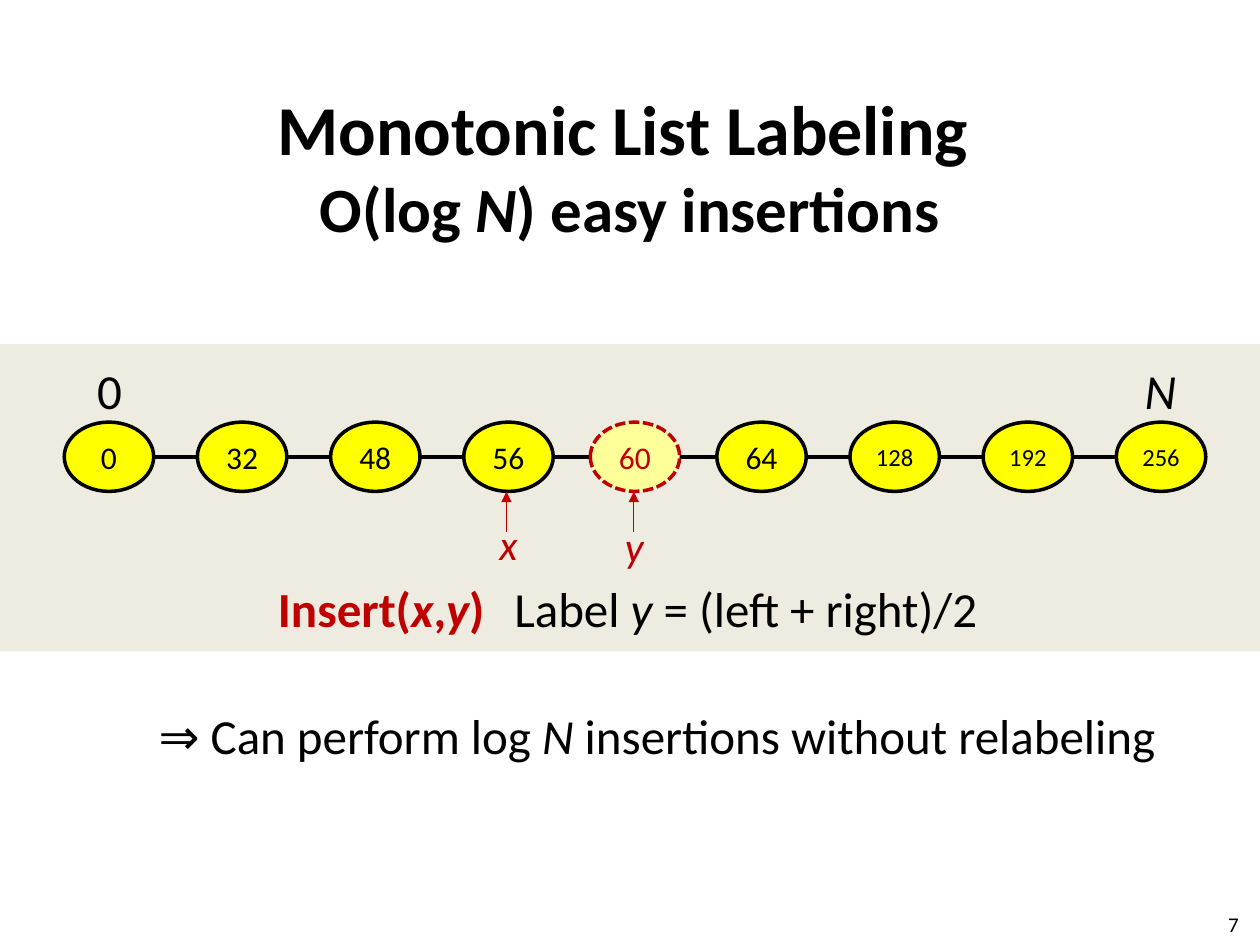
from lxml import etree
from pptx import Presentation
from pptx.dml.color import RGBColor
from pptx.enum.dml import MSO_LINE
from pptx.enum.shapes import MSO_CONNECTOR, MSO_SHAPE
from pptx.enum.text import MSO_ANCHOR, MSO_AUTO_SIZE, PP_ALIGN
from pptx.oxml.ns import qn
from pptx.util import Pt

BLACK = RGBColor(0x00, 0x00, 0x00)
RED = RGBColor(0xC0, 0x00, 0x00)
YELLOW = RGBColor(0xFF, 0xFF, 0x00)
PALE_YELLOW = RGBColor(0xFF, 0xFF, 0x99)
BEIGE = RGBColor(0xEE, 0xEC, 0xE1)
CENTER, RIGHT = PP_ALIGN.CENTER, PP_ALIGN.RIGHT
MIDDLE, TOP = MSO_ANCHOR.MIDDLE, MSO_ANCHOR.TOP
STRAIGHT = MSO_CONNECTOR.STRAIGHT


def add_run(paragraph, text, size, color=BLACK, bold=False, italic=False):
    run = paragraph.add_run()
    run.text = text
    font = run.font
    font.name, font.size = "Calibri", Pt(size)
    font.bold, font.italic = bold, italic
    font.color.rgb = color


def add_line(x1, y1, x2, y2, color, width):
    line = slide.shapes.add_connector(STRAIGHT, Pt(x1), Pt(y1), Pt(x2), Pt(y2))
    line.line.color.rgb = color
    line.line.width = Pt(width)
    etree.SubElement(line.element.spPr, qn("a:effectLst"))
    return line


presentation = Presentation()
presentation.slide_width, presentation.slide_height = Pt(720), Pt(540)
slide = presentation.slides.add_slide(presentation.slide_layouts[1])
title, body = slide.placeholders

# Band behind everything
band = slide.shapes.add_shape(MSO_SHAPE.RECTANGLE, 0, Pt(196.6), Pt(720), Pt(175.7))
band.shadow.inherit = False
band.fill.solid()
band.fill.fore_color.rgb = BEIGE
band.line.fill.background()
title.element.addprevious(band.element)

# Title
title.left, title.top, title.width, title.height = 0, Pt(20.9), Pt(720), Pt(147.6)
title.text_frame.auto_size = MSO_AUTO_SIZE.NONE
title.text_frame.vertical_anchor = MIDDLE
paragraph = title.text_frame.paragraphs[0]
paragraph.alignment = CENTER
add_run(paragraph, "Monotonic List Labeling", 40, bold=True)
add_run(paragraph, " ", 36, bold=True)
paragraph.add_line_break()
add_run(paragraph, "O(log ", 36, bold=True)
add_run(paragraph, "N", 36, bold=True, italic=True)
add_run(paragraph, ") easy insertions", 36, bold=True)

# Body: the operation, then its consequence
body.left, body.top, body.width, body.height = Pt(-1.4), Pt(326.9), Pt(720), Pt(158.4)
body.text_frame.auto_size = MSO_AUTO_SIZE.NONE
operation = body.text_frame.paragraphs[0]
consequence = body.text_frame.add_paragraph()
for paragraph, margin, indent, gap in (
    (operation, 27, -27, 5.6),
    (consequence, 33.5, 0, 39),
):
    paragraph.alignment = CENTER
    paragraph.space_before = Pt(gap)
    properties = paragraph._p.get_or_add_pPr()
    properties.set("marL", str(Pt(margin)))
    properties.set("indent", str(Pt(indent)))
    etree.SubElement(properties, qn("a:buNone"))
tabs = etree.SubElement(operation._p.pPr, qn("a:tabLst"))
etree.SubElement(tabs, qn("a:tab"), pos=str(Pt(127.5)), algn="l")

for text, italic in (("Insert(", False), ("x", True), (",", False), ("y", True), (")", False)):
    add_run(operation, text, 28, RED, bold=True, italic=italic)
for text, italic in (("\tLabel ", False), ("y", True), (" = (left + right)/2", False)):
    add_run(operation, text, 28, italic=italic)
for text, italic in (
    ("⇒ Can perform log ", False),
    ("N ", True),
    ("insertions without relabeling", False),
):
    add_run(consequence, text, 28, italic=italic)

# List: evenly spaced nodes on either side of the inserted one
NODE_WIDTH, NODE_HEIGHT, NODE_TOP = 51.1, 39.6, 241.2
PITCH, FIRST_LEFT, LAST_LEFT = 76.1, 36.7, 637.9
lefts = [FIRST_LEFT + PITCH * i for i in range(4)]
lefts.append((FIRST_LEFT + LAST_LEFT) / 2)
lefts += [LAST_LEFT - PITCH * i for i in (3, 2, 1, 0)]
labels = (0, 32, 48, 56, 60, 64, 128, 192, 256)

add_line(FIRST_LEFT + NODE_WIDTH, 261.3, LAST_LEFT, 261.3, BLACK, 2.25)
for left, label in zip(lefts, labels):
    inserted = label == 60
    node = slide.shapes.add_shape(
        MSO_SHAPE.OVAL, Pt(left), Pt(NODE_TOP), Pt(NODE_WIDTH), Pt(NODE_HEIGHT))
    node.shadow.inherit = False
    node.fill.solid()
    node.fill.fore_color.rgb = PALE_YELLOW if inserted else YELLOW
    node.line.color.rgb = RED if inserted else BLACK
    node.line.width = Pt(2)
    if inserted:
        node.line.dash_style = MSO_LINE.SQUARE_DOT
    frame = node.text_frame
    frame.margin_left = frame.margin_right = 0
    frame.word_wrap = False
    frame.vertical_anchor = MIDDLE
    frame.paragraphs[0].alignment = CENTER
    add_run(frame.paragraphs[0], str(label), 14 if label > 99 else 18,
            RED if inserted else BLACK)

# Arrows up to x and y
for x in (289.4, 362.2):
    arrow = add_line(x, 303.8, x, 281, RED, 0.75)
    etree.SubElement(arrow.line._get_or_add_ln(), qn("a:tailEnd"), type="triangle")

# Pointer names, range ends and slide number
for text, left, top, width, height, size, color, italic, align, anchor in (
    ("x", 270.7, 293, 39.6, 36, 24, RED, True, CENTER, TOP),
    ("y", 342.7, 293.8, 39.6, 36, 24, RED, True, CENTER, TOP),
    ("N", 643, 202.3, 40.3, 51.1, 28, BLACK, True, CENTER, TOP),
    ("0", 42.5, 202.3, 40.3, 51.1, 28, BLACK, False, CENTER, TOP),
    ("7", 547.2, 513.4, 167.8, 28.8, 12, BLACK, False, RIGHT, MIDDLE),
):
    box = slide.shapes.add_textbox(Pt(left), Pt(top), Pt(width), Pt(height))
    frame = box.text_frame
    frame.word_wrap = True
    frame.vertical_anchor = anchor
    frame.paragraphs[0].alignment = align
    add_run(frame.paragraphs[0], text, size, color, italic=italic)

presentation.save("out.pptx")
